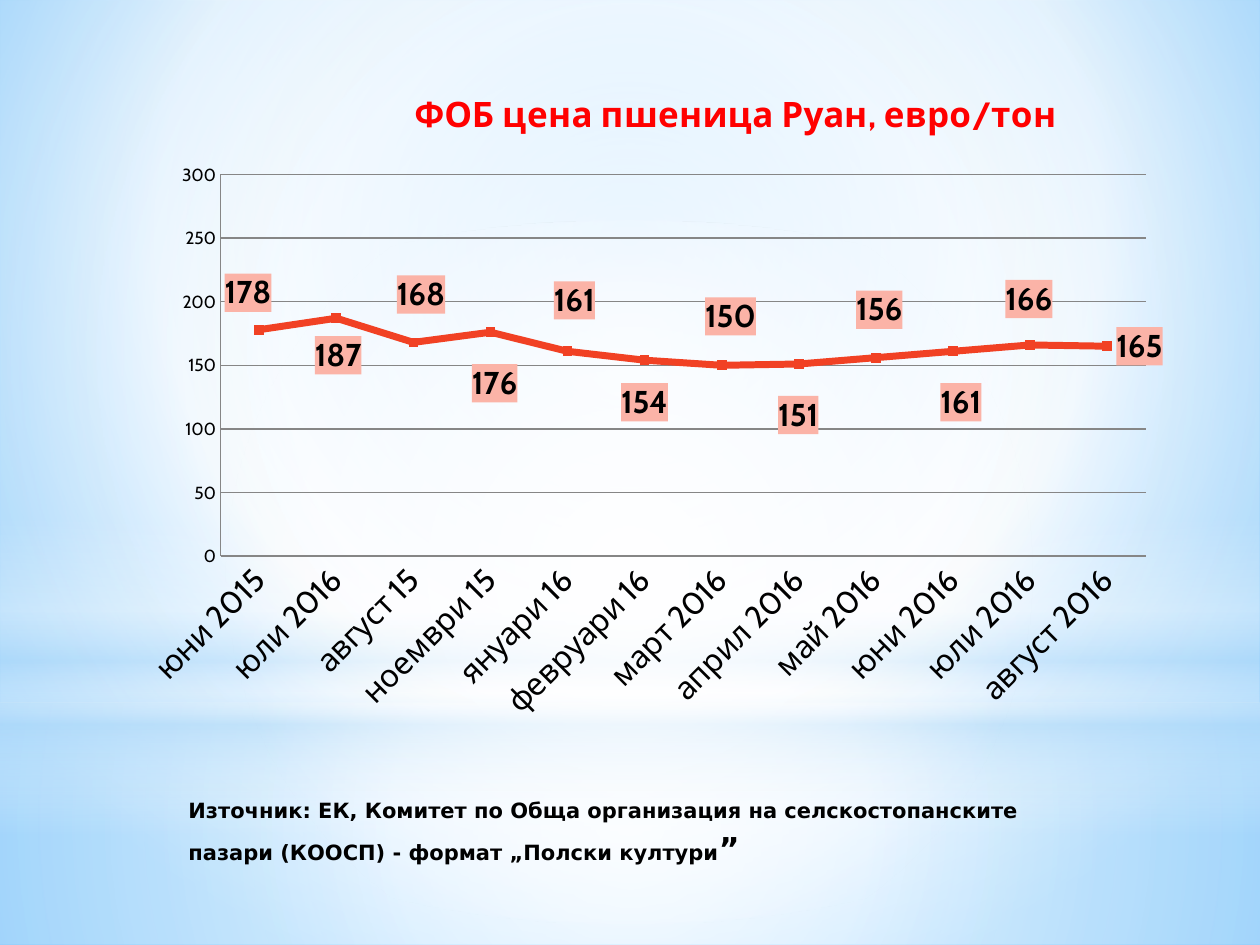
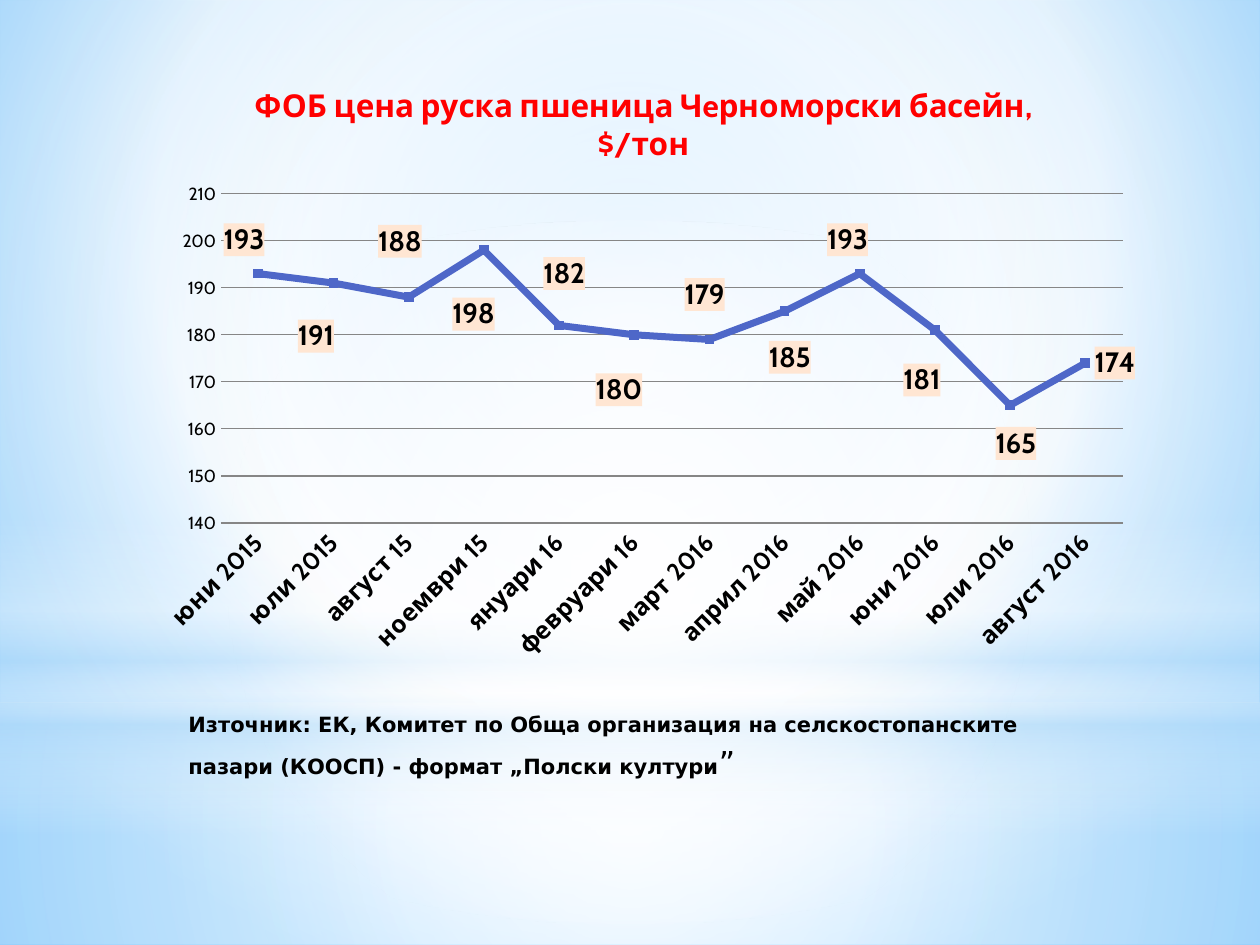
import copy
from dataclasses import dataclass

import pptx
import pptx.chart.data
import pptx.dml.color
import pptx.enum.chart
import pptx.enum.shapes
import pptx.oxml
import pptx.oxml.ns
import pptx.util

PX = 914400 / 126  # one px in EMU
qn = pptx.oxml.ns.qn
rgb = pptx.dml.color.RGBColor.from_string
Pt = pptx.util.Pt


@dataclass(frozen=True)
class Theme:
    font: str = "Cabin"
    source_font: str = "DejaVu Sans"
    text: str = "000000"
    title: str = "FF0000"
    grid: str = "868686"
    red: str = "F14124"
    red_tint: str = "FBB3A7"
    blue: str = "4E67C8"
    peach: str = "FFE6D3"
    axis_size: int = 10
    source_size: int = 12
    quote_size: int = 18
    line_width: int = 4


THEME = Theme()
MONTHS = ["август 15", "ноември 15", "януари 16", "февруари 16", "март 2016", "април 2016",
          "май 2016", "юни 2016", "юли 2016", "август 2016"]
SOURCE = ("Източник: ЕК, Комитет по Обща организация на селскостопанските пазари "
          "(КООСП) - формат „Полски култури")


def px(*lengths):
    return [round(n * PX) for n in lengths]


def xml(text):
    """Build an element with the drawing and chart namespaces declared on it."""
    head, sep, tail = text.partition(">")
    slash = "/" if head.endswith("/") else ""
    return pptx.oxml.parse_xml(f"{head.rstrip('/')} {pptx.oxml.ns.nsdecls('a', 'c')}{slash}{sep}{tail}")


# Background
def gradient(stops, to=None):
    """Stops are (position, colour, opacity); without a target rect it runs downwards."""
    gs = "".join(f'<a:gs pos="{pos * 1000}"><a:srgbClr val="{color}">'
                 f'<a:alpha val="{alpha * 1000}"/></a:srgbClr></a:gs>'
                 for pos, color, alpha in stops)
    if to:
        sides = " ".join(f'{side}="{n * 1000}"' for side, n in zip("ltrb", to))
        way = f'<a:path path="circle"><a:fillToRect {sides}/></a:path>'
    else:
        way = '<a:lin ang="5400000" scaled="0"/>'
    return xml(f'<a:gradFill rotWithShape="1"><a:gsLst>{gs}</a:gsLst>{way}</a:gradFill>')


def set_gradient(fill, owner, grad):
    fill.solid()
    solid = owner.xpath(".//p:bgPr/a:solidFill | ./p:spPr/a:solidFill")[0]
    solid.getparent().replace(solid, grad)


def glow(s, kind, box, stops, to=None):
    sp = s.shapes.add_shape(kind, *px(*box))
    sp.shadow.inherit = False
    sp.line.fill.background()
    set_gradient(sp.fill, sp.element, gradient(stops, to))
    return sp


def build_master(prs, s):
    """Draw the sky bands on a slide, then move them behind the master's placeholders."""
    master = prs.slide_master
    set_gradient(master.background.fill, master.element, gradient(
        [(0, "9ED5FF", 100), (60, "FFFFFF", 100), (100, "5BB9FF", 100)], (20, 10, 20, 60)))
    rect = pptx.enum.shapes.MSO_SHAPE.RECTANGLE
    oval = pptx.enum.shapes.MSO_SHAPE.OVAL
    centre = (50, 50, 50, 50)
    bands = [
        glow(s, rect, (0, 703, 1260, 242),
             [(0, "FFFFFF", 91), (37, "FFFFFF", 76), (100, "B4DCFA", 79)], centre),
        glow(s, rect, (0, 0, 1260, 703),
             [(0, "FFFFFF", 89), (48, "FFFFFF", 62), (100, "B4DCFA", 79)], centre),
        glow(s, rect, (0, 519, 1260, 315),
             [(0, "FFFFFF", 0), (29, "FFFFFF", 30), (45, "B4DCFA", 40),
              (55, "FFFFFF", 26), (65, "B4DCFA", 60), (100, "FFFFFF", 0)]),
        glow(s, oval, (0, 221, 1260, 703), [(0, "FFFFFF", 100), (56, "FFFFFF", 0)], centre),
    ]
    tree = master.shapes.element
    for i, sp in enumerate(bands):
        sp.element.nvSpPr.cNvPr.set("id", str(100 + i))
        tree.insert(2 + i, sp.element)


# Chart parts
def layout(x, y, w=None, h=None, edge=True):
    """Manual layout in fractions of the chart; a size makes it an inner plot area."""
    parts = [("x", x), ("y", y)]
    modes = ""
    if w:
        parts += [("w", w), ("h", h)]
        modes = '<c:layoutTarget val="inner"/>'
    if edge:
        modes += '<c:xMode val="edge"/><c:yMode val="edge"/>'
    body = "".join(f'<c:{name} val="{n:.4f}"/>' for name, n in parts)
    return xml(f"<c:layout><c:manualLayout>{modes}{body}</c:manualLayout></c:layout>")


def drop_layout(parent):
    for old in parent.findall(qn("c:layout")):
        parent.remove(old)


def set_font(font, size, color=THEME.text, bold=False, name=THEME.font):
    font.name, font.size, font.bold = name, Pt(size), bold
    font.color.rgb = rgb(color)


def add_title(chart, text, size, place):
    p = chart.chart_title.text_frame.paragraphs[0]
    p.text = text
    set_font(p.font, size, THEME.title, True)
    title = chart.chart_title._element
    drop_layout(title)
    title.find(qn("c:tx")).addnext(layout(*place))


def style_axes(chart, size, bold, low, high, step, value_line):
    cat, val = chart.category_axis, chart.value_axis
    none = pptx.enum.chart.XL_TICK_MARK.NONE
    for axis in (cat, val):
        axis.major_tick_mark = axis.minor_tick_mark = none
        axis.format.line.color.rgb = rgb(THEME.grid)
    set_font(cat.tick_labels.font, size, bold=bold)
    set_font(val.tick_labels.font, THEME.axis_size)
    cat._element.find(qn("c:txPr")).find(qn("a:bodyPr")).set("rot", "-2700000")
    val.minimum_scale, val.maximum_scale, val.major_unit = low, high, step
    val.has_major_gridlines = True
    val.major_gridlines.format.line.color.rgb = rgb(THEME.grid)
    val.major_gridlines.format.line.width = Pt(0.75)
    if not value_line:
        val.format.line.fill.background()


def style_series(series, color):
    series.smooth = False
    series.format.line.color.rgb = rgb(color)
    series.format.line.width = Pt(THEME.line_width)
    series.marker.style = pptx.enum.chart.XL_MARKER_STYLE.SQUARE
    series.marker.size = 5
    series.marker.format.fill.solid()
    series.marker.format.fill.fore_color.rgb = rgb(color)
    series.marker.format.line.color.rgb = rgb(color)


def add_labels(series, size, tint, shifts, chart_size):
    """Label every point on the right; shifts move the leading ones, in px."""
    labels = series.data_labels
    labels.show_value = True
    labels.position = pptx.enum.chart.XL_LABEL_POSITION.RIGHT
    set_font(labels.font, size, bold=True)
    root = labels._element
    root.find(qn("c:txPr")).addprevious(xml(
        f'<c:spPr><a:solidFill><a:srgbClr val="{tint}"/></a:solidFill></c:spPr>'))
    for leader in root.findall(qn("c:showLeaderLines")):
        root.remove(leader)
    shared = list(root)
    root.append(xml('<c:showLeaderLines val="0"/>'))
    width, height = chart_size
    for i, (dx, dy) in enumerate(shifts):
        label = xml(f'<c:dLbl><c:idx val="{i}"/></c:dLbl>')
        label.append(layout(dx / width, dy / height, edge=False))
        label.extend([copy.deepcopy(el) for el in shared])
        root.insert(i, label)


def add_price_chart(s, box, months, prices, title, axes, plot, color, tint, label_size, shifts):
    data = pptx.chart.data.CategoryChartData()
    data.categories = months
    data.add_series("Series 1", prices)
    kind = pptx.enum.chart.XL_CHART_TYPE.LINE_MARKERS
    chart = s.shapes.add_chart(kind, *px(*box), data).chart
    chart.has_legend = False
    set_font(chart.font, THEME.axis_size)
    add_title(chart, *title)
    style_axes(chart, **axes)
    chart.plots[0].vary_by_categories = False
    area = chart._chartSpace.chart.plotArea
    drop_layout(area)
    area.insert(0, layout(*plot))
    series = chart.plots[0].series[0]
    style_series(series, color)
    add_labels(series, label_size, tint, shifts, box[2:])


# Source note
def add_source(s, top, bold_quote):
    tf = s.shapes.add_textbox(*px(176, top, 937, 86)).text_frame
    tf.word_wrap = True
    p = tf.paragraphs[0]
    p.line_spacing, p.space_after = 1.15, Pt(10)
    for text, size, bold in ((SOURCE, THEME.source_size, True),
                             ("”", THEME.quote_size, bold_quote)):
        r = p.add_run()
        r.text = text
        set_font(r.font, size, bold=bold, name=THEME.source_font)


def main():
    prs = pptx.Presentation()
    prs.slide_width, prs.slide_height = px(1260, 945)
    rouen, black_sea = [prs.slides.add_slide(prs.slide_layouts[6]) for _ in range(2)]
    build_master(prs, rouen)

    # Rouen wheat
    add_price_chart(
        rouen, (147, 74, 1019, 703), ["юни 2015", "юли 2016"] + MONTHS,
        [178, 187, 168, 176, 161, 154, 150, 151, 156, 161, 166, 165],
        title=("ФОБ цена пшеница Руан, евро/тон", 20, (0.255, 0.013)),
        axes=dict(size=18, bold=False, low=0, high=300, step=50, value_line=True),
        plot=(0.071, 0.143, 0.909, 0.543),
        color=THEME.red, tint=THEME.red_tint, label_size=18,
        shifts=[(-44, -37), (-31, 37), (-26, -48), (-28, 51), (-23, -51), (-33, 42),
                (-26, -49), (-30, 51), (-29, -48), (-22, 51), (-34, -46)])
    add_source(rouen, 788, True)

    # Black Sea wheat
    add_price_chart(
        black_sea, (146, 64, 998, 609), ["юни 2015", "юли 2015"] + MONTHS,
        [193, 191, 188, 198, 182, 180, 179, 185, 193, 181, 165, 174],
        title=("ФОБ цена руска пшеница Чeрноморски басейн, $/тон", 18, (0.103, 0.022)),
        axes=dict(size=14, bold=True, low=140, high=210, step=10, value_line=False),
        plot=(0.075, 0.213, 0.904, 0.541),
        color=THEME.blue, tint=THEME.peach, label_size=16,
        shifts=[(-44, -34), (-45, 53), (-40, -56), (-41, 64), (-25, -52), (-48, 55),
                (-34, -45), (-25, 46), (-42, -34), (-41, 50), (-24, 38)])
    add_source(black_sea, 702, False)

    prs.save("out.pptx")


if __name__ == "__main__":
    main()
